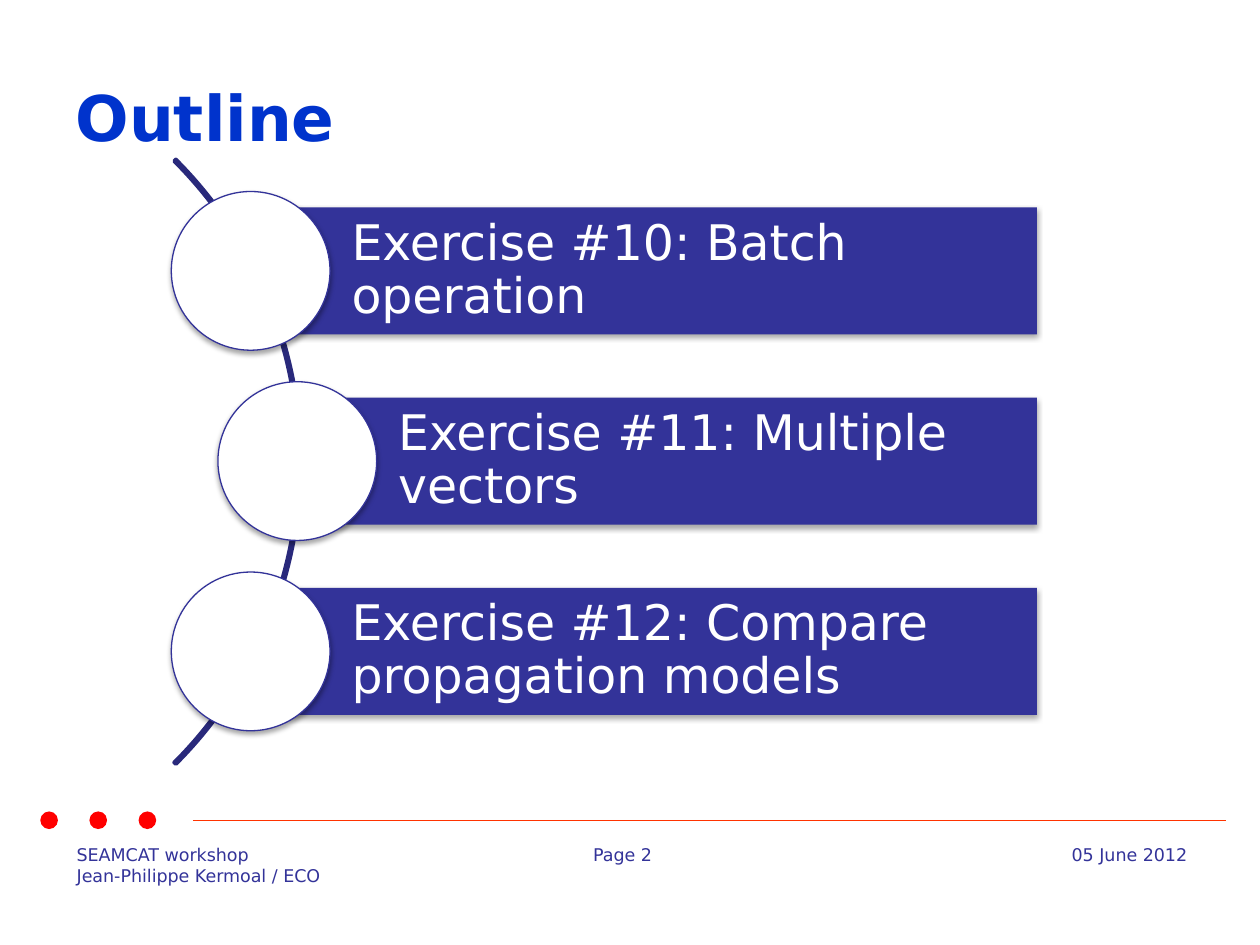
import pptx
import pptx.util
import pptx.dml.color
import pptx.enum.shapes
import pptx.enum.text
import pptx.oxml
import pptx.oxml.ns

Inches = pptx.util.Inches
Pt = pptx.util.Pt
RGBColor = pptx.dml.color.RGBColor
Shape = pptx.enum.shapes.MSO_SHAPE
Align = pptx.enum.text.PP_ALIGN
Anchor = pptx.enum.text.MSO_ANCHOR

WHITE = RGBColor(0xFF, 0xFF, 0xFF)
INDIGO = RGBColor(0x33, 0x33, 0x99)
NAVY = RGBColor(0x29, 0x29, 0x7B)
BLUE = RGBColor(0x00, 0x33, 0xCC)
RED = RGBColor(0xFF, 0x00, 0x00)
ORANGE = RGBColor(0xFF, 0x33, 0x00)
FONT = "DejaVu Sans"
NS = pptx.oxml.ns.nsdecls("a")
SHADOW = (
    f'<a:effectLst {NS}><a:outerShdw blurRad="{Pt(3.1)}" dist="{Pt(1.8)}" '
    'dir="5400000" rotWithShape="0"><a:srgbClr val="000000">'
    '<a:alpha val="35000"/></a:srgbClr></a:outerShdw></a:effectLst>'
)


def style(frame, size, color, bold=False, align=Align.LEFT):
    for para in frame.paragraphs:
        para.alignment = align
        for run in para.runs:
            run.font.name = FONT
            run.font.size = Pt(size)
            run.font.bold = bold
            run.font.color.rgb = color


def add_shape(slide, kind, box, fill=None, line=None, width=0.75, shadow=False):
    shape = slide.shapes.add_shape(kind, *map(Inches, box))
    if shadow:
        shape._element.spPr.append(pptx.oxml.parse_xml(SHADOW))
    else:
        shape.shadow.inherit = False
    if fill is None:
        shape.fill.background()
    else:
        shape.fill.solid()
        shape.fill.fore_color.rgb = fill
    if line is None:
        shape.line.fill.background()
    else:
        shape.line.color.rgb = line
        shape.line.width = Pt(width)
    return shape


def add_title(slide, text):
    title = slide.shapes.title
    title.left, title.top = Inches(0.5), Inches(0.3)
    title.width, title.height = Inches(9), Inches(1.25)
    frame = title.text_frame
    frame.text = text
    frame.vertical_anchor = Anchor.MIDDLE
    style(frame, 36, BLUE, bold=True)


def add_note(slide, text, box, align=Align.LEFT):
    frame = slide.shapes.add_textbox(*map(Inches, box)).text_frame
    frame.word_wrap = True
    frame.text = text
    style(frame, 10, INDIGO, align=align)


def add_rule(slide):
    rule = slide.shapes.add_connector(
        pptx.enum.shapes.MSO_CONNECTOR.STRAIGHT,
        Inches(1.53), Inches(6.51), Inches(9.73), Inches(6.51))
    rule._element.spPr.append(pptx.oxml.parse_xml(f"<a:effectLst {NS}/>"))
    rule.line.color.rgb = ORANGE
    rule.line.width = Pt(0.75)


def add_footer(slide):
    add_note(slide, "SEAMCAT workshop\nJean-Philippe Kermoal / ECO",
             (0.51, 6.65, 2.21, 0.43))
    add_note(slide, "Page 2", (4.61, 6.65, 0.82, 0.27))
    add_note(slide, "05 June 2012", (7.73, 6.65, 1.79, 0.27), Align.RIGHT)
    add_rule(slide)
    for i in range(3):
        add_shape(slide, Shape.OVAL, (0.32 + 0.39 * i, 6.44, 0.14, 0.14), RED)


def add_arc(slide):
    arc = add_shape(slide, Shape.BLOCK_ARC, (-4.4, 0.27, 6.79, 6.79),
                    line=NAVY, width=2)
    for i, value in enumerate((189, 27, 0.003)):
        arc.adjustments[i] = value


def add_step(slide, text, left, mid):
    bar = add_shape(slide, Shape.RECTANGLE,
                    (left, mid - 0.505, 8.23 - left, 1.01), INDIGO, shadow=True)
    frame = bar.text_frame
    frame.word_wrap = True
    frame.vertical_anchor = Anchor.MIDDLE
    frame.margin_left = Inches(0.8)
    frame.margin_top = frame.margin_right = frame.margin_bottom = Inches(0.08)
    frame.text = text
    frame.paragraphs[0].line_spacing = 0.9
    style(frame, 28, WHITE)
    add_shape(slide, Shape.OVAL, (left - 0.63, mid - 0.63, 1.26, 1.26),
              WHITE, INDIGO, shadow=True)


def main():
    deck = pptx.Presentation()
    deck.slide_width, deck.slide_height = Inches(10), Inches(7.5)
    slide = deck.slides.add_slide(deck.slide_layouts[5])
    add_footer(slide)
    add_title(slide, "Outline")
    add_arc(slide)
    steps = (
        ("Exercise #10: Batch operation", 1.99),
        ("Exercise #11: Multiple vectors", 2.36),
        ("Exercise #12: Compare propagation models", 1.99),
    )
    for i, (text, left) in enumerate(steps):
        add_step(slide, text, left, 2.15 + 1.51 * i)
    deck.save("out.pptx")


if __name__ == "__main__":
    main()
